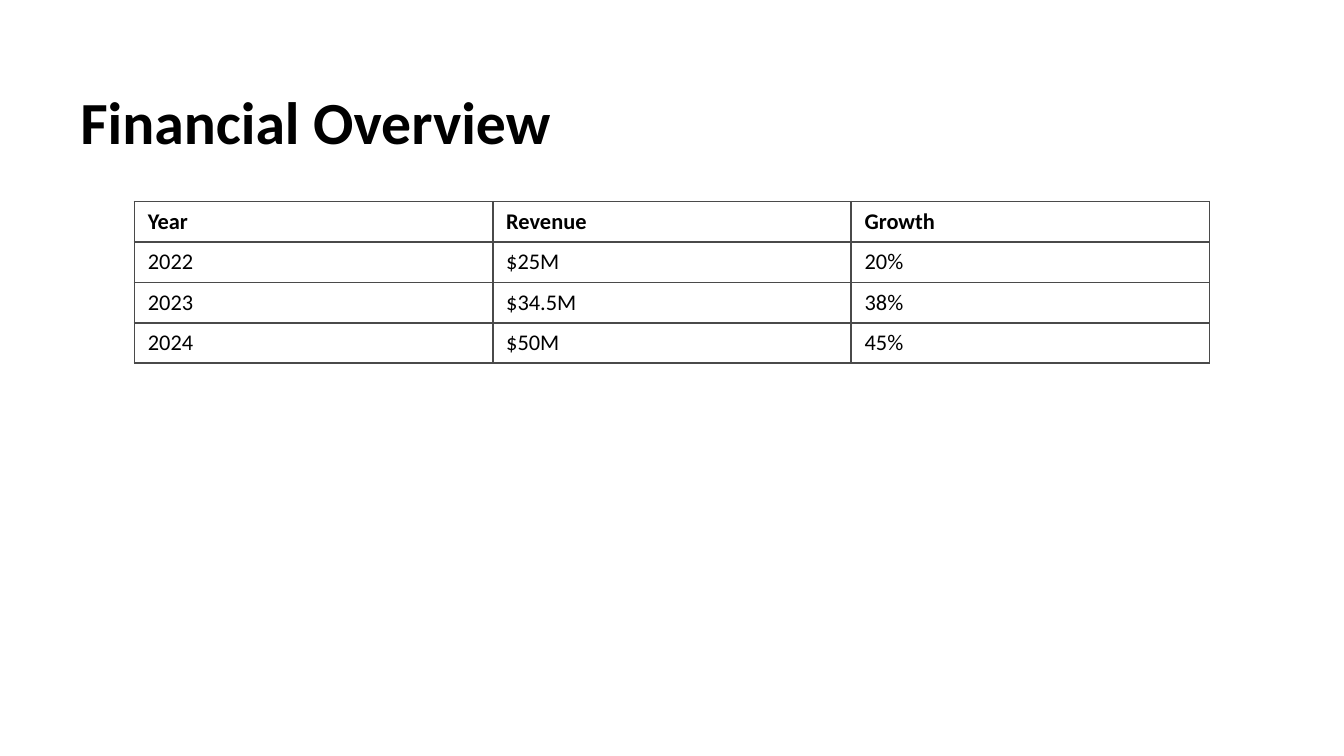
from dataclasses import dataclass

from lxml.etree import SubElement
from pptx import Presentation
from pptx.dml.color import RGBColor
from pptx.enum.text import MSO_ANCHOR
from pptx.oxml.ns import qn
from pptx.slide import Slide
from pptx.table import _Cell
from pptx.text.text import _Paragraph
from pptx.util import Inches, Pt

BLACK = RGBColor(0x00, 0x00, 0x00)
GRAY = RGBColor(0x4A, 0x4A, 0x4A)
WIDTH = Inches(10)
HEIGHT = WIDTH * 9 // 16
ROWS = (
    ("Year", "Revenue", "Growth"),
    ("2022", "$25M", "20%"),
    ("2023", "$34.5M", "38%"),
    ("2024", "$50M", "45%"),
)


@dataclass(frozen=True)
class Style:
    size: int
    bold: bool


TITLE = Style(32, True)
HEAD = Style(12, True)
BODY = Style(12, False)


def write(para: _Paragraph, text: str, style: Style) -> None:
    run = para.add_run()
    run.text = text
    values = {"name": "Calibri", "size": Pt(style.size), "bold": style.bold}
    for key, value in values.items():
        setattr(run.font, key, value)
    run.font.color.rgb = BLACK


def border(cell: _Cell) -> None:
    """Draw a one-point line on all four sides of the cell."""
    props = cell._tc.get_or_add_tcPr()
    for side in ("lnL", "lnR", "lnT", "lnB"):
        line = SubElement(props, qn(f"a:{side}"), w=str(Pt(1)))
        fill = SubElement(line, qn("a:solidFill"))
        SubElement(fill, qn("a:srgbClr"), val=str(GRAY))


def add_title(slide: Slide) -> None:
    left = int(WIDTH * 0.05)
    box = slide.shapes.add_textbox(left, Inches(0.5), WIDTH - 2 * left, Inches(0.8))
    frame = box.text_frame
    frame.word_wrap = True
    frame.vertical_anchor = MSO_ANCHOR.MIDDLE
    write(frame.paragraphs[0], "Financial Overview", TITLE)


def add_grid(slide: Slide) -> None:
    """Add the table; its rows have no set height and grow to fit the text."""
    left = int(WIDTH * 0.1)
    grid = slide.shapes.add_table(
        len(ROWS), len(ROWS[0]), left, Inches(1.5), WIDTH - 2 * left, Inches(1)
    ).table
    grid.first_row = grid.horz_banding = False
    for row, texts in enumerate(ROWS):
        grid.rows[row].height = 0
        for col, text in enumerate(texts):
            cell = grid.cell(row, col)
            border(cell)
            cell.fill.background()
            write(cell.text_frame.paragraphs[0], text, BODY if row else HEAD)


def main() -> None:
    deck = Presentation()
    deck.slide_width, deck.slide_height = WIDTH, HEIGHT
    slide = deck.slides.add_slide(deck.slide_layouts[6])
    add_title(slide)
    add_grid(slide)
    deck.save("out.pptx")


if __name__ == "__main__":
    main()
